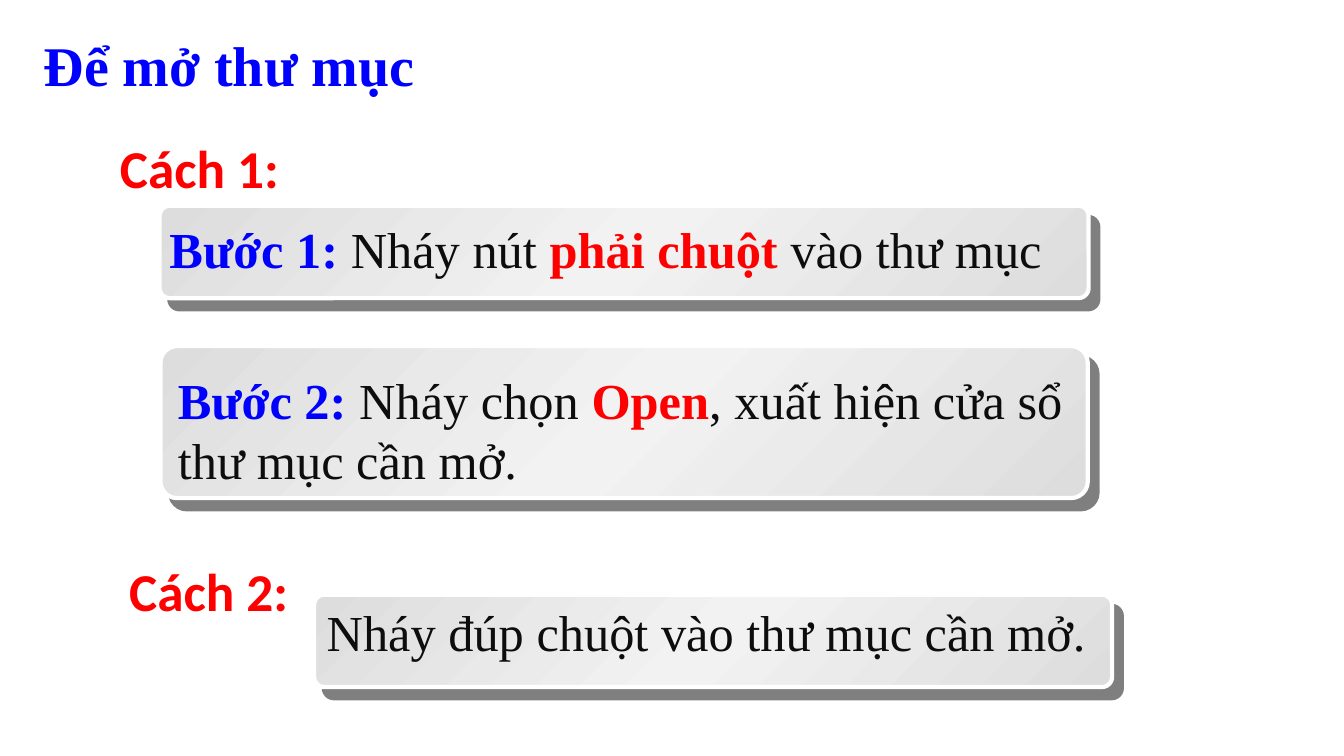
from copy import deepcopy

from lxml.etree import SubElement
from pptx import Presentation
from pptx.dml.color import RGBColor
from pptx.enum.shapes import MSO_SHAPE
from pptx.enum.text import MSO_ANCHOR, MSO_AUTO_SIZE, PP_ALIGN
from pptx.oxml.ns import qn
from pptx.util import Inches, Pt

BLUE = RGBColor(0x00, 0x00, 0xFF)
RED = RGBColor(0xFF, 0x00, 0x00)
INK = RGBColor(0x0D, 0x0D, 0x0D)
WHITE = RGBColor(0xFF, 0xFF, 0xFF)
SILVER = RGBColor(0xDD, 0xDD, 0xDD)
PALE = RGBColor(0xF2, 0xF2, 0xF2)
BLACK = RGBColor(0x00, 0x00, 0x00)

SERIF = "Times New Roman"
SANS = "Calibri"

SLIDE_WIDTH, SLIDE_HEIGHT = Inches(13.333), Inches(7.5)
COLUMNS, ROWS = 160, 90
LABEL_SIZE = (30.1, 8.9)


def grid(left, top, width, height):
    """Turn columns and rows of the slide grid into lengths."""
    column, row = SLIDE_WIDTH / COLUMNS, SLIDE_HEIGHT / ROWS
    return (round(left * column), round(top * row),
            round(width * column), round(height * row))


def write(frame, pieces, font_name, size):
    """Fill a frame with one paragraph of (words, colour, bold) pieces."""
    frame.word_wrap = True
    frame.auto_size = MSO_AUTO_SIZE.SHAPE_TO_FIT_TEXT
    frame.vertical_anchor = MSO_ANCHOR.TOP
    paragraph = frame.paragraphs[0]
    paragraph.alignment = PP_ALIGN.LEFT
    paragraph.line_spacing = 1.0
    for words, colour, bold in pieces:
        run = paragraph.add_run()
        run.text = words
        run.font.name = font_name
        run.font.size = Pt(size)
        run.font.bold = bold
        run.font.color.rgb = colour


def add_title(slide, words, area):
    title = slide.shapes.title
    title.left, title.top, title.width, title.height = grid(*area)
    write(title.text_frame, [(words, BLUE, True)], SERIF, 40)


def add_label(slide, words, left, top):
    label = slide.shapes.add_textbox(*grid(left, top, *LABEL_SIZE))
    write(label.text_frame, [(words, RED, True)], SANS, 38)


def shade(panel):
    """Give a panel its diagonal silver sheen."""
    panel.fill.gradient()
    stop_list = panel.element.spPr.find(".//" + qn("a:gsLst"))
    stop_list.insert(1, deepcopy(stop_list[0]))
    sheen = zip(panel.fill.gradient_stops, (SILVER, PALE, SILVER), (0, 0.5, 1))
    for stop, colour, position in sheen:
        stop.color.rgb = colour
        stop.position = position
    panel.fill.gradient_angle = 315


def cast_shadow(panel):
    """Add a hard, half-transparent shadow to the lower right."""
    panel.shadow.inherit = False
    effects = panel.element.spPr.find(qn("a:effectLst"))
    shadow = SubElement(effects, qn("a:outerShdw"), blurRad="0",
                        dist=str(Pt(10.6)), dir=str(49 * 60000),
                        algn="ctr", rotWithShape="0")
    colour = SubElement(shadow, qn("a:srgbClr"), val=str(BLACK))
    SubElement(colour, qn("a:alpha"), val="50000")


def add_step(slide, panel_area, text_area, pieces):
    """Group a raised panel with the instruction that lies on it."""
    step = slide.shapes.add_group_shape()
    panel = step.shapes.add_shape(MSO_SHAPE.ROUNDED_RECTANGLE, *grid(*panel_area))
    panel.adjustments[0] = 0.11
    shade(panel)
    panel.line.color.rgb = WHITE
    panel.line.width = Pt(3)
    cast_shadow(panel)
    instruction = step.shapes.add_textbox(*grid(*text_area))
    write(instruction.text_frame, pieces, SERIF, 36)


def main():
    presentation = Presentation()
    presentation.slide_width = SLIDE_WIDTH
    presentation.slide_height = SLIDE_HEIGHT
    title_only = presentation.slide_layouts[5]
    slide = presentation.slides.add_slide(title_only)

    add_title(slide, "Để mở thư mục", (4, 3, 56, 9.2))
    add_step(slide, (19.1, 41.2, 110.4, 18.1), (20, 43.3, 109.4, 15.7), [
        ("Bước 2: ", BLUE, True),
        ("Nháy chọn ", INK, False),
        ("Open", RED, True),
        (", xuất hiện cửa sổ thư mục cần mở.", INK, False),
    ])
    add_step(slide, (19, 24.5, 110.6, 11), (19, 25.4, 114.2, 8.5), [
        ("Bước 1: ", BLUE, True),
        ("Nháy nút ", INK, False),
        ("phải chuột ", RED, True),
        ("vào thư mục", INK, False),
    ])
    add_label(slide, "Cách 1:", 13.1, 15.5)
    add_label(slide, "Cách 2:", 14.2, 65.9)
    add_step(slide, (37.4, 70.8, 95, 11), (37.7, 71, 98.4, 8.5), [
        ("Nháy đúp chuột vào thư mục cần mở.", INK, False),
    ])
    presentation.save("out.pptx")


if __name__ == "__main__":
    main()
